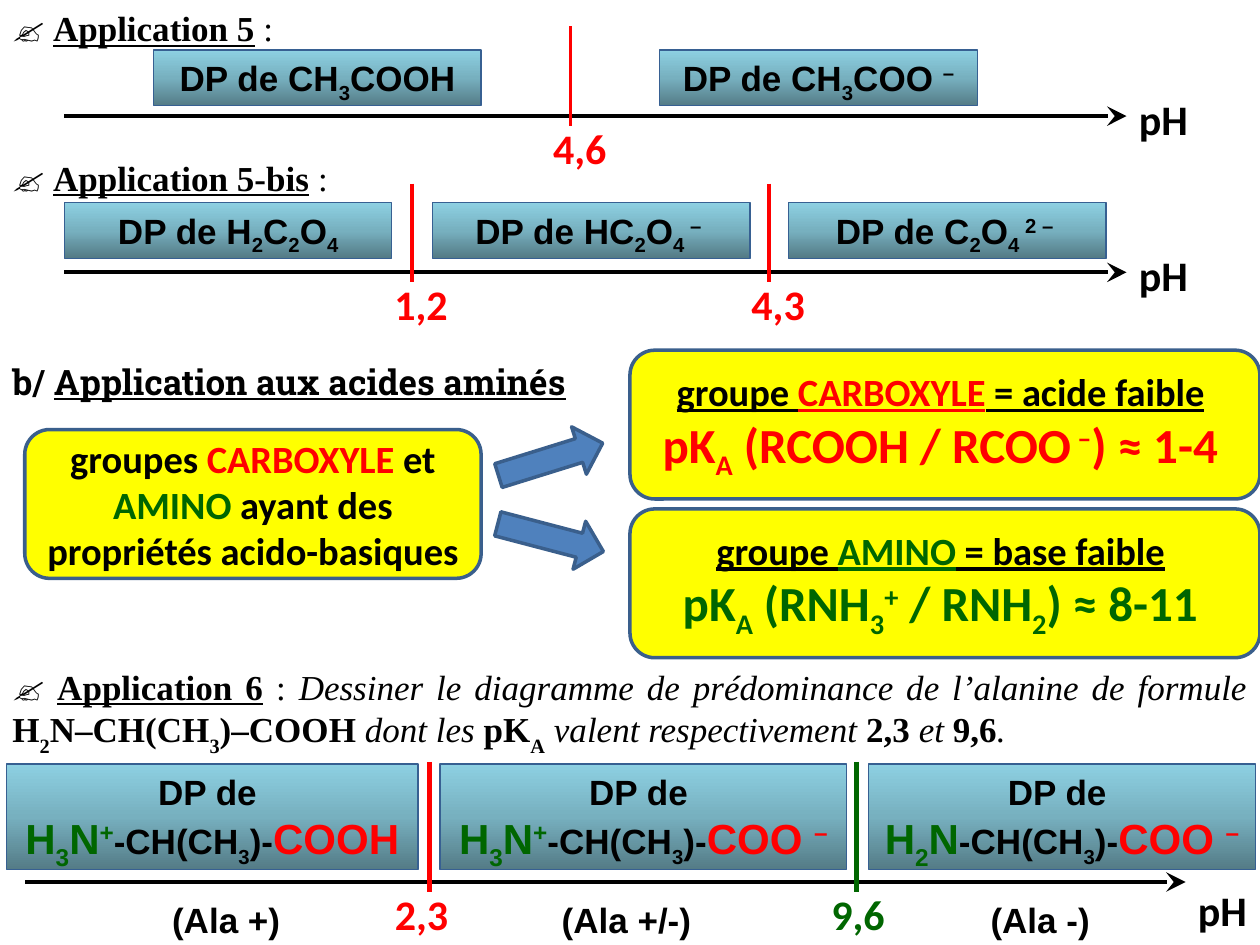
from copy import deepcopy

from lxml.etree import SubElement
from pptx import Presentation
from pptx.dml.color import RGBColor
from pptx.enum.shapes import MSO_CONNECTOR as Link, MSO_SHAPE as Shape
from pptx.enum.text import MSO_ANCHOR as Anchor, MSO_AUTO_SIZE as AutoSize, PP_ALIGN as Align
from pptx.oxml.ns import qn
from pptx.util import Cm, Pt

COLORS = {
    "ink": "000000", "acid": "FF0000", "amino": "006600", "panel": "FFFF00",
    "panel_edge": "3A5F8C", "arrow": "4F81BD", "zone_edge": "376092",
    "zone_dark": "547B86", "zone_mid": "77B0BF", "zone_light": "8DD0E2",
}
ACID, AMINO = {"color": "acid"}, {"color": "amino"}
LINK, ITALIC, PLAIN = {"underline": True}, {"bold": False, "italic": True}, {"bold": False}


def rgb(name):
    """Return the named colour."""
    return RGBColor.from_string(COLORS[name])


def formula(marked, depth=-25, **style):
    """Split text at bars into runs, where _ lowers and ^ raises a part."""
    shifts = {"_": depth, "^": 30}
    return [(part[1:], {**style, "shift": shifts[part[0]]}) if part[0] in shifts else (part, style)
            for part in marked.split("|")]


def write(holder, paragraphs, font, size, align=Align.CENTER, anchor=Anchor.TOP, wrap=True, grow=True, **common):
    """Fill a shape with paragraphs of (text, style) runs."""
    frame = holder.text_frame
    frame.word_wrap = wrap
    frame.vertical_anchor = anchor
    frame.auto_size = AutoSize.SHAPE_TO_FIT_TEXT if grow else AutoSize.NONE
    for number, runs in enumerate(paragraphs):
        paragraph = frame.add_paragraph() if number else frame.paragraphs[0]
        paragraph.alignment = align
        for text, own in runs:
            style = {"bold": True, "color": "ink", "size": size, **common, **own}
            run = paragraph.add_run()
            run.text = text
            run.font.name = font
            run.font.size = Pt(style["size"])
            run.font.bold = style["bold"]
            run.font.italic = style.get("italic")
            run.font.underline = style.get("underline")
            run.font.color.rgb = rgb(style["color"])
            if "shift" in style:
                run.font._element.set("baseline", str(style["shift"] * 1000))


def add_text(slide, box, paragraphs, font, size, **options):
    """Add a text box."""
    write(slide.shapes.add_textbox(*map(Cm, box)), paragraphs, font, size, **options)


def add_block(slide, kind, box, edge, width, fill=None):
    """Add an outlined preset shape, with a plain fill if one is named."""
    block = slide.shapes.add_shape(kind, *map(Cm, box))
    block.shadow.inherit = False
    block.line.color.rgb = rgb(edge)
    block.line.width = Pt(width)
    if fill:
        block.fill.solid()
        block.fill.fore_color.rgb = rgb(fill)
    return block


def add_line(slide, ends, color, width, arrow=False):
    """Add a straight line, with an arrowhead at its end on request."""
    line = slide.shapes.add_connector(Link.STRAIGHT, *map(Cm, ends))
    line.line.color.rgb = rgb(color)
    line.line.width = Pt(width)
    properties = line._element.spPr
    if arrow:
        SubElement(properties.find(qn("a:ln")), qn("a:tailEnd"), type="stealth", w="lg", len="lg")
    SubElement(properties, qn("a:effectLst"))


def add_zone(slide, box, paragraphs):
    """Add a shaded predominance zone."""
    zone = add_block(slide, Shape.RECTANGLE, box, "zone_edge", 0.75)
    zone.fill.gradient()
    zone.fill.gradient_angle = 90
    first = zone._element.spPr.find(".//" + qn("a:gs"))
    first.addnext(deepcopy(first))
    shades = ((0, "zone_dark"), (0.5, "zone_mid"), (1, "zone_light"))
    for stop, (position, shade) in zip(zone.fill.gradient_stops, shades):
        stop.position = position
        stop.color.rgb = rgb(shade)
    write(zone, paragraphs, "Arial", 20)


def add_diagram(slide, box, zones, zone_top, zone_height, thresholds, weight=2.25, ph_lift=0.58, captions=()):
    """Draw a pH axis along the bottom of the box with its zones and thresholds."""
    left, top, width, height = box
    axis, right = top + height, left + width
    add_line(slide, (left, axis, right, axis), "ink", 2.25, arrow=True)
    add_text(slide, (right, axis - ph_lift, 1.5, 1.27), [[("pH", {})]], "Calibri", 24,
             align=Align.LEFT, wrap=False)
    for x, span, paragraphs in zones:
        add_zone(slide, (left + x, top + zone_top, span, zone_height), paragraphs)
    for x, label_x, value, color in thresholds:
        add_line(slide, (left + x, top, left + x, axis + 0.2), color, weight)
        add_text(slide, (left + label_x, axis, 1.6, 1.27), [[(value, {"color": color})]], "Calibri", 24,
                 align=Align.LEFT, wrap=False)
    for x, span, species in captions:
        add_text(slide, (left + x, axis + 0.2, span, 1.12), [[(species, {})]], "Arial", 20, wrap=False)


def add_application(slide, box, title, statement):
    """Write an exercise heading followed by its statement."""
    add_text(slide, box, [[("✍ ", {}), (title, LINK), *statement]], "Times New Roman", 20,
             align=Align.JUSTIFY, anchor=Anchor.MIDDLE)


def add_amino_section(slide, box):
    """Show the two groups of amino acids with their acid-base properties."""
    left, top, width, height = box
    add_text(slide, (left, top + 0.08, 12.88, 1.12),
             [[("b/ ", {}), ("Application aux acides aminés", LINK)]], "Roboto Slab", 20,
             align=Align.JUSTIFY, wrap=False)
    panels = (
        (0.5, 1.6, 9.2, [[("groupes ", {}), ("CARBOXYLE", ACID), (" et ", {}), ("AMINO", AMINO),
                          (" ayant des propriétés acido-basiques", {})]]),
        (width / 2, 0, width / 2, [
            [("groupe ", LINK), ("CARBOXYLE", {**LINK, **ACID}), (" = acide faible", LINK), (" ", {})],
            formula("pK|_A| (RCOOH / RCOO|^ –|) ≈ 1-4", size=28, **ACID) + [(" ", {"size": 24})]]),
        (width / 2, height - 3, width / 2, [
            [("groupe ", LINK), ("AMINO", {**LINK, **AMINO}), (" = base faible", LINK), (" ", {})],
            formula("pK|_A| (RNH|_3|^+| / RNH|_2|) ≈ 8-11", size=28, **AMINO) + [(" ", {"size": 24})]]),
    )
    for x, y, span, paragraphs in panels:
        panel = add_block(slide, Shape.ROUNDED_RECTANGLE, (left + x, top + y, span, 3), "panel_edge", 2, "panel")
        write(panel, paragraphs, "Calibri", 22, anchor=Anchor.MIDDLE, grow=False)
    for y, angle in ((1.7, -17.3), (3.28, 14.7)):
        arrow = add_block(slide, Shape.RIGHT_ARROW, (left + 10, top + y, 2.2, 1), "panel_edge", 2, "arrow")
        arrow.rotation = angle


def simple_zone(species):
    """Return the one-line text of a zone."""
    return [formula("DP de " + species)]


def alanine_zone(amine, acid):
    """Return the two-line text of an alanine zone."""
    return [[("DP de ", {})],
            formula(amine, -30, size=24, **AMINO) + formula("-CH(CH|_3|)-", -30)
            + formula(acid, size=24, **ACID)]


def main():
    """Build and save the slide."""
    deck = Presentation()
    deck.slide_width, deck.slide_height = Cm(25.4), Cm(19.05)
    slide = deck.slides.add_slide(deck.slide_layouts[6])

    add_application(slide, (0, 0, 25.4, 1.12), "Application 5", [(" :", PLAIN)])
    add_diagram(slide, (1.3, 0.53, 21.41, 1.81),
                [(1.8, 6.6, simple_zone("CH|_3|COOH")), (12, 6.4, simple_zone("CH|_3|COO |^–"))],
                0.48, 1.12, [(10.2, 9.6, "4,6", "acid")])

    add_application(slide, (0, 3.02, 7.1, 1.12), "Application 5-bis", [(" :", PLAIN)])
    add_diagram(slide, (1.3, 3.7, 21.41, 1.79),
                [(0, 6.6, simple_zone("H|_2|C|_2|O|_4")),
                 (7.42, 6.4, simple_zone("HC|_2|O|_4|^ – ")),
                 (14.6, 6.4, simple_zone("C|_2|O|_4|^ 2 – "))],
                0.39, 1.12, [(7, 6.4, "1,2", "acid"), (14.2, 13.6, "4,3", "acid")])

    add_amino_section(slide, (0, 7.06, 25.4, 6.2))

    add_application(slide, (0, 13.36, 25.4, 1.96), "Application 6", [
        (" : ", PLAIN), ("Dessiner le diagramme de prédominance de l’alanine de formule ", ITALIC),
        *formula("H|_2|N–CH(CH|_3|)–COOH ", -30), ("dont les ", ITALIC), *formula("pK|_A", -30),
        (" valent respectivement ", ITALIC), ("2,3", {}), (" et ", ITALIC), ("9,6", {}), (".", ITALIC)])
    add_diagram(slide, (0.51, 15.36, 23.39, 2.42),
                [(-0.38, 8.3, alanine_zone("H|_3|N|^+", "COOH")),
                 (8.36, 8.2, alanine_zone("H|_3|N|^+", "COO |^–")),
                 (17, 7.8, alanine_zone("H|_2|N", "COO |^–"))],
                0.04, 2.13, [(8.15, 7.2, "2,3", "acid"), (16.76, 16, "9,6", "amino")],
                weight=3, ph_lift=0.08,
                captions=[(2.7, 2.7, "(Ala +)"), (10.56, 3.12, "(Ala +/-)"), (19.2, 2.52, "(Ala -)")])
    deck.save("out.pptx")


if __name__ == "__main__":
    main()
